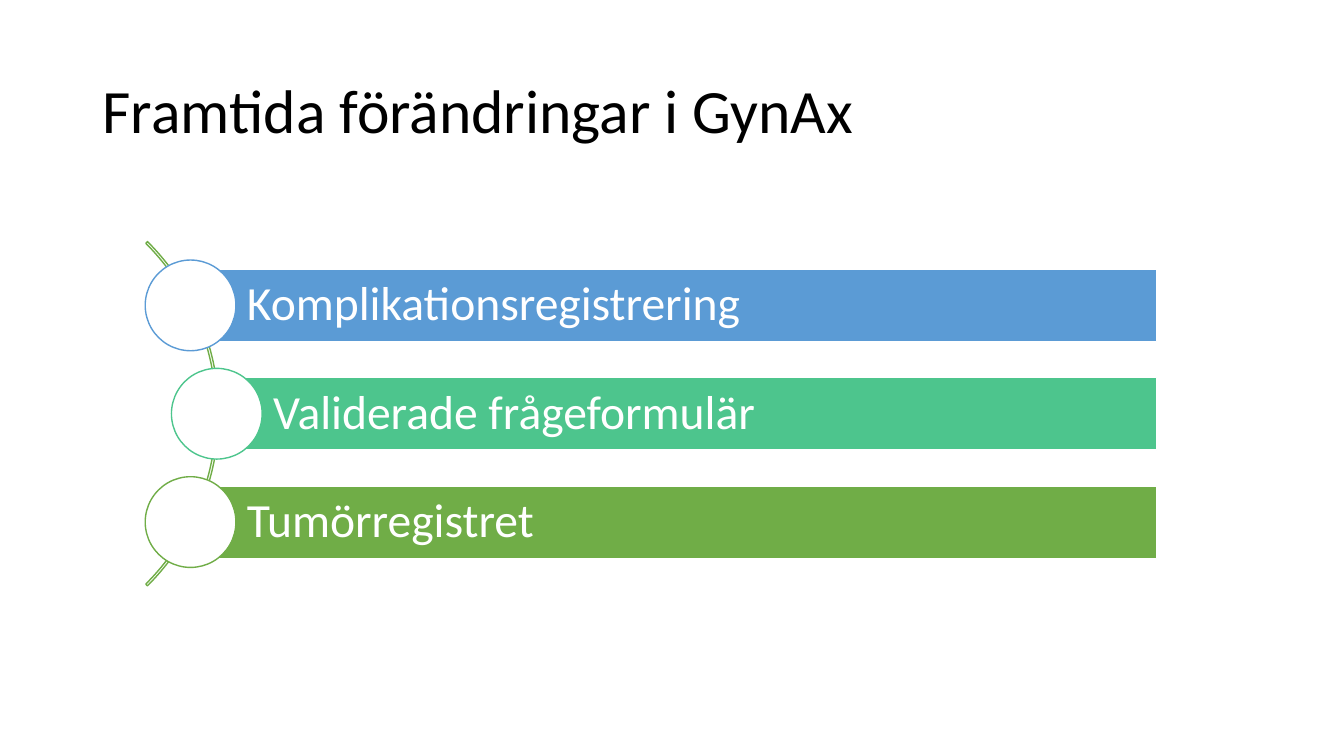
from pptx import Presentation
from pptx import util as u
from pptx.dml import color
from pptx.enum import shapes, text

HUES = {"ink": "000000", "white": "FFFFFF", "blue": "5B9BD5",
        "mint": "4DC58D", "green": "70AD47"}
KIND = shapes.MSO_SHAPE
ROWS = [("Komplikationsregistrering", "blue", 0),
        ("Validerade frågeformulär", "mint", 1.95),
        ("Tumörregistret", "green", 0)]


class Board:
    """Draws styled elements on one slide, with lengths in percent of its size."""

    def __init__(self, deck):
        self.deck = deck
        self.slide = deck.slides.add_slide(deck.slide_layouts[6])
        self.font = "Calibri"

    def place(self, left, mid, wide, high):
        across = self.deck.slide_width / 100
        down = self.deck.slide_height / 100
        return (round(left * across), round((mid - high / 2) * down),
                round(wide * across), round(high * down))

    def shape(self, kind, box, line, fill=None):
        item = self.slide.shapes.add_shape(kind, *self.place(*box))
        item.shadow.inherit = False
        item.line.color.rgb = color.RGBColor.from_string(HUES[line])
        item.line.width = u.Pt(1)
        if fill:
            item.fill.solid()
            item.fill.fore_color.rgb = color.RGBColor.from_string(HUES[fill])
        else:
            item.fill.background()
        return item

    def label(self, item, words, size, hue, inset=0.1):
        frame = item.text_frame
        frame.text = words
        frame.word_wrap = True
        frame.vertical_anchor = text.MSO_ANCHOR.MIDDLE
        frame.margin_left = u.Inches(inset)
        para = frame.paragraphs[0]
        para.alignment = text.PP_ALIGN.LEFT
        para.line_spacing = 0.9
        font = para.runs[0].font
        font.name, font.size = self.font, u.Pt(size)
        font.color.rgb = color.RGBColor.from_string(HUES[hue])

    def title(self, words, box):
        item = self.slide.shapes.add_textbox(*self.place(*box))
        self.label(item, words, 44, "ink")

    def arc(self, box, hue):
        item = self.shape(KIND.BLOCK_ARC, box, hue)
        for spot, value in enumerate((189, 27, 0.005)):
            item.adjustments[spot] = value

    def bar(self, words, left, right, mid, hue):
        item = self.shape(KIND.RECTANGLE, (left, mid, right - left, 9.6), "white", hue)
        self.label(item, words, 34, "white", 0.57)

    def dot(self, center, mid, hue):
        wide, high = 6.75, 12
        self.shape(KIND.OVAL, (center - wide / 2, mid, wide, high), hue, "white")


def main():
    deck = Presentation()
    deck.slide_width, deck.slide_height = u.Inches(13.33), u.Inches(7.5)
    board = Board(deck)
    board.title("Framtida förändringar i GynAx", (6.9, 15, 86.27, 19.33))
    center, pitch = 54.73, 14.33
    board.arc((-19.95, center, 36.23, 64.4), "green")
    for row, (words, hue, shift) in enumerate(ROWS):
        left, mid = 14.1 + shift, center + (row - 1) * pitch
        board.bar(words, left, 86.05, mid, hue)
        board.dot(left + 0.08, mid, hue)
    deck.save("out.pptx")


if __name__ == "__main__":
    main()
